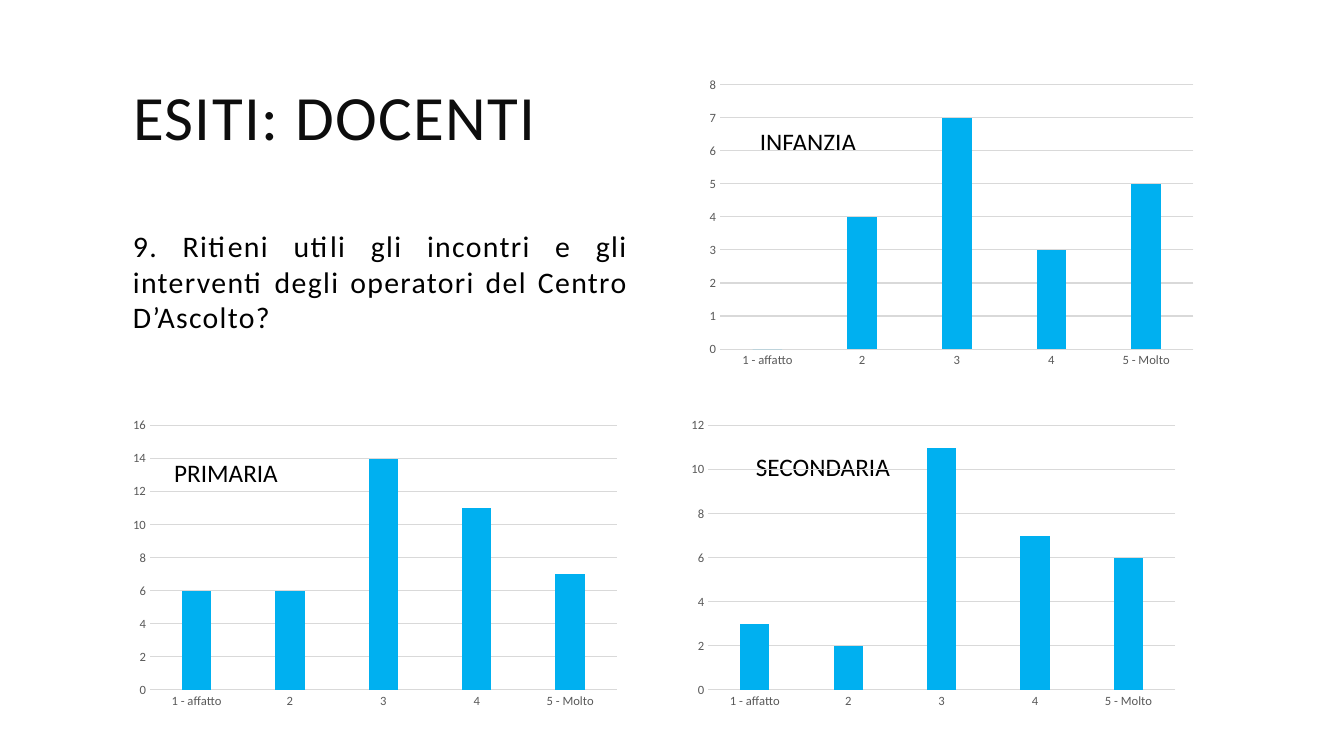
from lxml import etree
from pptx import Presentation
from pptx.chart.data import CategoryChartData
from pptx.dml.color import RGBColor
from pptx.enum.chart import XL_CHART_TYPE as ChartType, XL_TICK_MARK as Tick
from pptx.enum.text import MSO_ANCHOR as Anchor, MSO_AUTO_SIZE as AutoSize, PP_ALIGN as Align
from pptx.oxml import parse_xml
from pptx.oxml.ns import nsdecls
from pptx.util import Cm, Pt

FONT = "Calibri"
COLORS = {"title": "0D0D0D", "text": "000000", "axis": "595959",
          "grid": "D9D9D9", "bar": "00B0F0"}


def color(name):
    return RGBColor.from_string(COLORS[name])


def write(shape, text, size=18, tint="text", align=Align.LEFT,
          anchor=Anchor.TOP, tracking=0, line_spacing=1.0):
    frame = shape.text_frame
    frame.word_wrap = True
    frame.auto_size = AutoSize.NONE
    frame.vertical_anchor = anchor
    frame.text = text
    paragraph = frame.paragraphs[0]
    paragraph.alignment = align
    paragraph.line_spacing = line_spacing
    font = paragraph.runs[0].font
    font.name, font.size = FONT, Pt(size)
    font.color.rgb = color(tint)
    paragraph.runs[0]._r.get_or_add_rPr().set("spc", str(tracking * 100))


prs = Presentation()
prs.slide_width, prs.slide_height = Cm(33.87), Cm(19.05)
slide = prs.slides.add_slide(prs.slide_layouts[5])

# Heading and question
left_margin = Cm(3.1)
heading = slide.shapes.title
heading.left, heading.top, heading.width, heading.height = (
    left_margin, Cm(1.57), Cm(21.54), Cm(3.02))
write(heading, "ESITI: DOCENTI", size=45, tint="title", anchor=Anchor.MIDDLE,
      tracking=1, line_spacing=0.8)

question = slide.shapes.add_textbox(left_margin, Cm(5.61), Cm(13), Cm(3))
write(question, "9. Ritieni utili gli incontri e gli interventi degli operatori "
      "del Centro D’Ascolto?", size=21.3, align=Align.JUSTIFY, tracking=1)

# School levels: name, label position, chart position, answers, axis maximum and step
answers = ["1 - affatto", "2", "3", "4", "5 - Molto"]
schools = [
    ("INFANZIA", (18.9, 3.07), (17.63, 1.8), (0, 4, 7, 3, 5), 8, 1),
    ("PRIMARIA", (4.14, 11.4), (3.1, 10.39), (6, 6, 14, 11, 7), 16, 2),
    ("SECONDARIA", (18.8, 11.25), (17.17, 10.39), (3, 2, 11, 7, 6), 12, 2),
]

# Labels lie behind the charts
for school, (x, y), *_ in schools:
    write(slide.shapes.add_textbox(Cm(x), Cm(y), Cm(5.18), Cm(1.02)), school)

for school, _, (x, y), counts, top_value, step in schools:
    data = CategoryChartData()
    data.categories = answers
    data.add_series("Series 1", counts)
    chart = slide.shapes.add_chart(ChartType.COLUMN_CLUSTERED, Cm(x), Cm(y),
                                   Cm(12.7), Cm(7.62), data).chart
    chart.has_legend = chart.has_title = False
    chart.font.name, chart.font.size = FONT, Pt(10)
    chart.font.color.rgb = color("text")

    # Columns
    plot = chart.plots[0]
    plot.gap_width, plot.overlap, plot.vary_by_categories = 219, -27, False
    bars = plot.series[0].format.fill
    bars.solid()
    bars.fore_color.rgb = color("bar")

    # Axes and grid
    scale = chart.value_axis
    for axis in (chart.category_axis, scale):
        axis.major_tick_mark = axis.minor_tick_mark = Tick.NONE
        labels = axis.tick_labels.font
        labels.name, labels.size = FONT, Pt(9)
        labels.color.rgb = color("axis")
    scale.minimum_scale, scale.maximum_scale, scale.major_unit = 0, top_value, step
    scale.has_major_gridlines = True
    scale.format.line.fill.background()
    for line in (chart.category_axis.format.line, scale.major_gridlines.format.line):
        line.color.rgb = color("grid")
        line.width = Pt(0.75)

    # Clear backgrounds keep the labels visible
    clear = parse_xml(f'<c:spPr {nsdecls("c", "a")}><a:noFill/>'
                      '<a:ln><a:noFill/></a:ln></c:spPr>')
    body = chart.element.chart
    body.plotArea.append(parse_xml(etree.tostring(clear)))
    body.addnext(clear)

prs.save("out.pptx")
